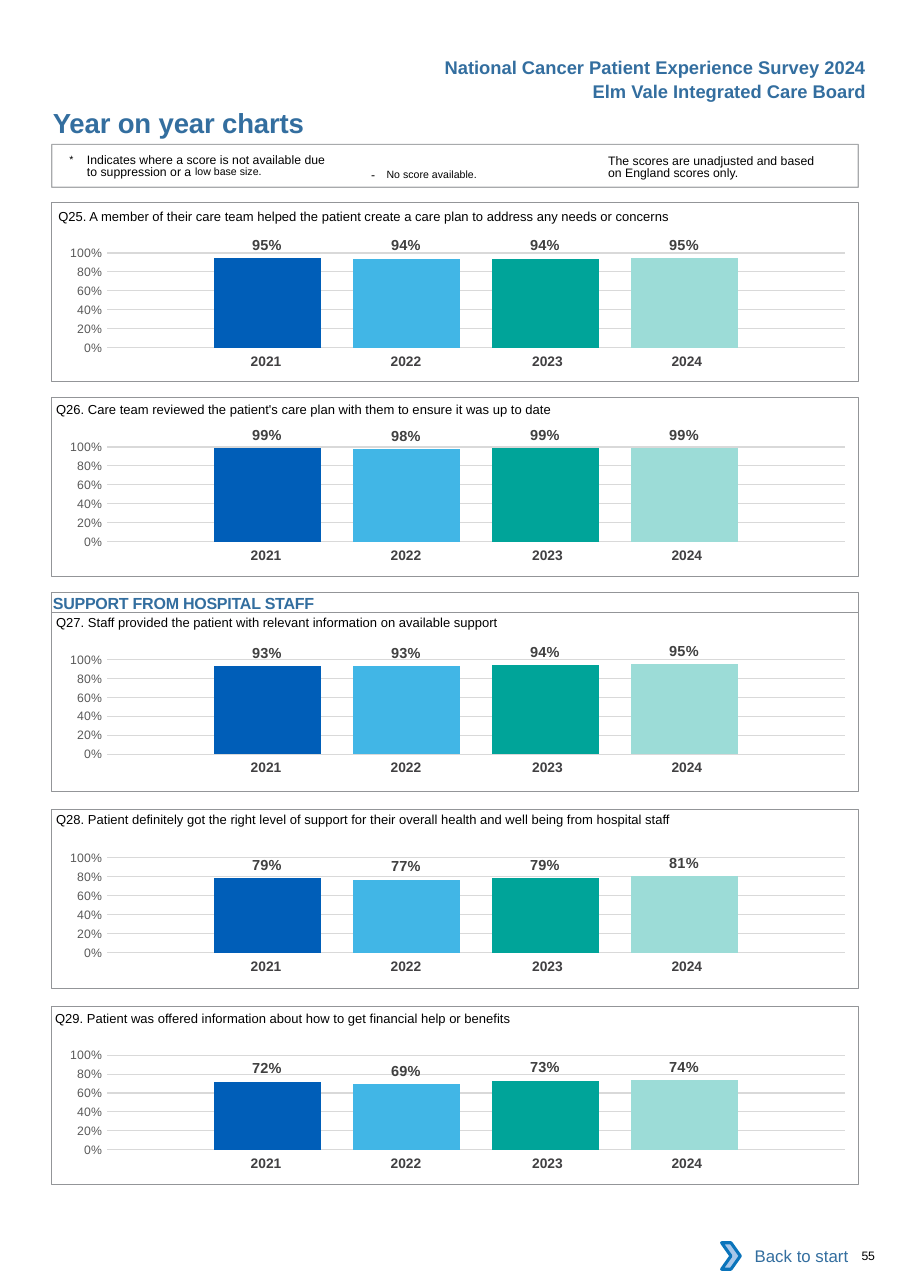
from lxml import etree
from pptx import Presentation
from pptx import util as u
from pptx.chart.data import CategoryChartData
from pptx.dml.color import RGBColor
from pptx.enum import chart as ch, shapes, text
from pptx.oxml.ns import qn

# Page grid: columns and rows of a hundredth of an inch
W, H = u.Inches(8.26), u.Inches(11.69)
COL, ROW = W / 826, H / 1169
LEFT, WIDTH, PANEL_H = 47, 732, 162

COLORS = {
    "heading": "336E9F", "black": "000000", "white": "FFFFFF",
    "frame": "939598", "grid": "D9D9D9", "axis": "595959",
    "label": "404040", "year": "414042",
    "chevron": "A8C7E9", "chevron_line": "0A74BB",
}
YEARS = {"2021": "005EB8", "2022": "41B6E6", "2023": "00A499", "2024": "9CDCD7"}
YEAR_COLS = [127, 127, 134, 127]
YEAR_RIGHT = [0, 0, 4, 12]
NO_TABLE_STYLE = "{2D5ABB26-0587-4C30-8999-92F81FD0307C}"

# Question, its left and top, panel top, chart top, scores by year
PANELS = [
    ("Q25. A member of their care team helped the patient create a care plan "
     "to address any needs or concerns", 53, 180, 184, 211, (0.95, 0.94, 0.94, 0.95)),
    ("Q26. Care team reviewed the patient's care plan with them to ensure "
     "it was up to date", 51, 355, 361, 387, (0.99, 0.98, 0.99, 0.99)),
    ("Q27. Staff provided the patient with relevant information on "
     "available support", 51, 549, 556, 580, (0.93, 0.93, 0.94, 0.95)),
    ("Q28. Patient definitely got the right level of support for their overall "
     "health and well being from hospital staff", 51, 728, 735, 760, (0.79, 0.77, 0.79, 0.81)),
    ("Q29. Patient was offered information about how to get financial help "
     "or benefits", 50, 908, 913, 939, (0.72, 0.69, 0.73, 0.74)),
]


def rgb(name):
    return RGBColor.from_string(COLORS.get(name, name))


def place(x, y, w, h):
    return [int(v) for v in (x * COL, y * ROW, w * COL, h * ROW)]


def style_font(font, size, color, bold=False, name="Arial"):
    font.name, font.size, font.bold = name, u.Pt(size), bold
    font.color.rgb = rgb(color)


def set_margins(box, left, top, right, bottom):
    box.margin_left, box.margin_right = int(left * COL), int(right * COL)
    box.margin_top, box.margin_bottom = int(top * ROW), int(bottom * ROW)


def write(tf, runs, size=8, color="black", bold=False, align=text.PP_ALIGN.LEFT,
          margins=(0, 0, 0, 0), leading=None):
    """Each run is (text, settings); settings: size, spc, baseline."""
    tf.word_wrap = True
    tf.vertical_anchor = text.MSO_ANCHOR.TOP
    set_margins(tf, *margins)
    p = tf.paragraphs[0]
    p.alignment = align
    if leading:
        p.line_spacing = u.Pt(leading)
    for words, settings in runs:
        r = p.add_run()
        r.text = words
        style_font(r.font, settings.get("size", size), color, bold)
        for key in ("spc", "baseline"):
            if key in settings:
                r._r.get_or_add_rPr().set(key, str(settings[key]))
    return p


def add_text(s, box, runs, **options):
    tf = s.shapes.add_textbox(*place(*box)).text_frame
    return write(tf, runs, **options)


def add_box(s, box, fill=None, line=None, width=0.5, kind=shapes.MSO_SHAPE.RECTANGLE):
    sp = s.shapes.add_shape(kind, *place(*box))
    sp.shadow.inherit = False
    if fill:
        sp.fill.solid()
        sp.fill.fore_color.rgb = rgb(fill)
    else:
        sp.fill.background()
    if line:
        sp.line.color.rgb = rgb(line)
        sp.line.width = u.Pt(width)
    else:
        sp.line.fill.background()
    return sp


def add_years(s, top):
    tbl = s.shapes.add_table(1, len(YEARS), *place(173, top, sum(YEAR_COLS), 27)).table
    tbl.first_row = tbl.horz_banding = False
    tbl._tbl.tblPr.find(qn("a:tableStyleId")).text = NO_TABLE_STYLE
    for i, year in enumerate(YEARS):
        tbl.columns[i].width = int(YEAR_COLS[i] * COL)
        cell = tbl.cell(0, i)
        cell.fill.background()
        set_margins(cell, 10, 5, YEAR_RIGHT[i], 5)
        p = cell.text_frame.paragraphs[0]
        p.alignment = text.PP_ALIGN.CENTER
        r = p.add_run()
        r.text = year
        style_font(r.font, 9, "year", True)


def set_plot_area(chart, **shares):
    area = chart._chartSpace.chart.plotArea
    for old in area.findall(qn("c:layout")):
        area.remove(old)
    layout = etree.Element(qn("c:layout"))
    manual = etree.SubElement(layout, qn("c:manualLayout"))
    settings = {"layoutTarget": "inner", "xMode": "edge", "yMode": "edge", **shares}
    for key, value in settings.items():
        etree.SubElement(manual, qn("c:" + key)).set("val", str(value))
    area.insert(0, layout)


def add_scores(s, top, scores):
    data = CategoryChartData(number_format="0%")
    data.categories = ["1"]
    for i, score in enumerate(scores, 1):
        data.add_series(f"Series {i}", [score])
    chart = s.shapes.add_chart(ch.XL_CHART_TYPE.COLUMN_CLUSTERED,
                               *place(39, top, WIDTH, 129), data).chart
    chart.has_title = chart.has_legend = False
    style_font(chart.font, 10, "black", name="Calibri")
    set_plot_area(chart, x=0.079, y=0.145, w=0.915, h=0.666)

    # Bars and their labels
    plot = chart.plots[0]
    plot.gap_width, plot.overlap, plot.vary_by_categories = 200, -30, False
    for series, color in zip(plot.series, YEARS.values()):
        series.format.fill.solid()
        series.format.fill.fore_color.rgb = rgb(color)
    plot.has_data_labels = True
    labels = plot.data_labels
    labels.show_value = True
    labels.position = ch.XL_LABEL_POSITION.OUTSIDE_END
    labels.number_format, labels.number_format_is_linked = "0%", False
    style_font(labels.font, 9.5, "label", True)

    # Axes
    chart.category_axis.visible = False
    axis = chart.value_axis
    axis.minimum_scale, axis.maximum_scale, axis.major_unit = 0, 1, 0.2
    axis.major_tick_mark = axis.minor_tick_mark = ch.XL_TICK_MARK.NONE
    axis.tick_labels.number_format = "0%"
    axis.tick_labels.number_format_is_linked = False
    style_font(axis.tick_labels.font, 8, "axis")
    axis.format.line.fill.background()
    grid = axis.major_gridlines.format.line
    grid.color.rgb, grid.width = rgb("grid"), u.Pt(0.75)


def add_panel(s, question, left, question_top, top, chart_top, scores):
    add_years(s, chart_top + 105)
    add_scores(s, chart_top, scores)
    add_box(s, (LEFT, top, WIDTH, PANEL_H), line="frame")
    add_text(s, (left, question_top, 720, 24), [(question, {})],
             size=8.5, margins=(0, 9, 0, 0))


def add_notes(s):
    frame = add_box(s, (LEFT, 131, WIDTH, 39), line="frame", width=0.75)
    color = frame._element.spPr.find(".//" + qn("a:ln")).find(".//" + qn("a:srgbClr"))
    etree.SubElement(color, qn("a:alpha")).set("val", "80000")
    small = {"size": 12, "baseline": 3000}
    p = add_text(s, (63, 138, 240, 27),
                 [("*\t", small),
                  ("Indicates where a score is not available due to suppression or a ", {}),
                  ("low base size.", {"size": 12, "baseline": 7000})],
                 margins=(0, 3, 0, 0), leading=8.1)
    pPr = p._p.get_or_add_pPr()
    pPr.set("marL", str(int(16 * COL)))
    pPr.set("indent", str(int(-16 * COL)))
    add_text(s, (327, 141, 183, 24), [("- ", {"spc": 260}), ("No score available.", small)],
             margins=(10, 5, 10, 5))
    add_text(s, (552, 138, 197, 27),
             [("The scores are unadjusted and based on England scores only.", {})],
             margins=(0, 3, 0, 0), leading=8.1)


def main():
    prs = Presentation()
    prs.slide_width, prs.slide_height = W, H
    s = prs.slides.add_slide(prs.slide_layouts[6])
    right = text.PP_ALIGN.RIGHT

    # Headings
    for top, words in ((46, "National Cancer Patient Experience Survey 2024"),
                       (68, "Elm Vale Integrated Care Board")):
        add_text(s, (350, top, 446, 30), [(words, {})], size=12, color="heading",
                 bold=True, align=right, margins=(10, 5, 10, 5))
    add_text(s, (48, 96, 450, 30), [("Year on year charts", {"spc": -10})],
             size=18, color="heading", bold=True)
    add_notes(s)

    # Question panels
    for panel in PANELS:
        add_panel(s, *panel)
    section = add_box(s, (LEFT, 538, WIDTH, 18), line="frame")
    write(section.text_frame, [("SUPPORT FROM HOSPITAL STAFF", {"spc": -15})],
          size=10.5, color="heading", bold=True, margins=(1, 1, 0, 0))

    # Footer
    back = add_box(s, (662, 1119, 118, 42), fill="white")
    write(back.text_frame, [("Back to start", {})], size=11, color="heading",
          align=right, margins=(10, 5, 10, 5))
    back.text_frame.vertical_anchor = text.MSO_ANCHOR.MIDDLE
    add_box(s, (655, 1128, 17, 24), fill="chevron", line="chevron_line", width=2,
            kind=shapes.MSO_SHAPE.CHEVRON)
    add_text(s, (782, 1133, 41, 13), [("55", {"spc": -20})])
    prs.save("out.pptx")


if __name__ == "__main__":
    main()
